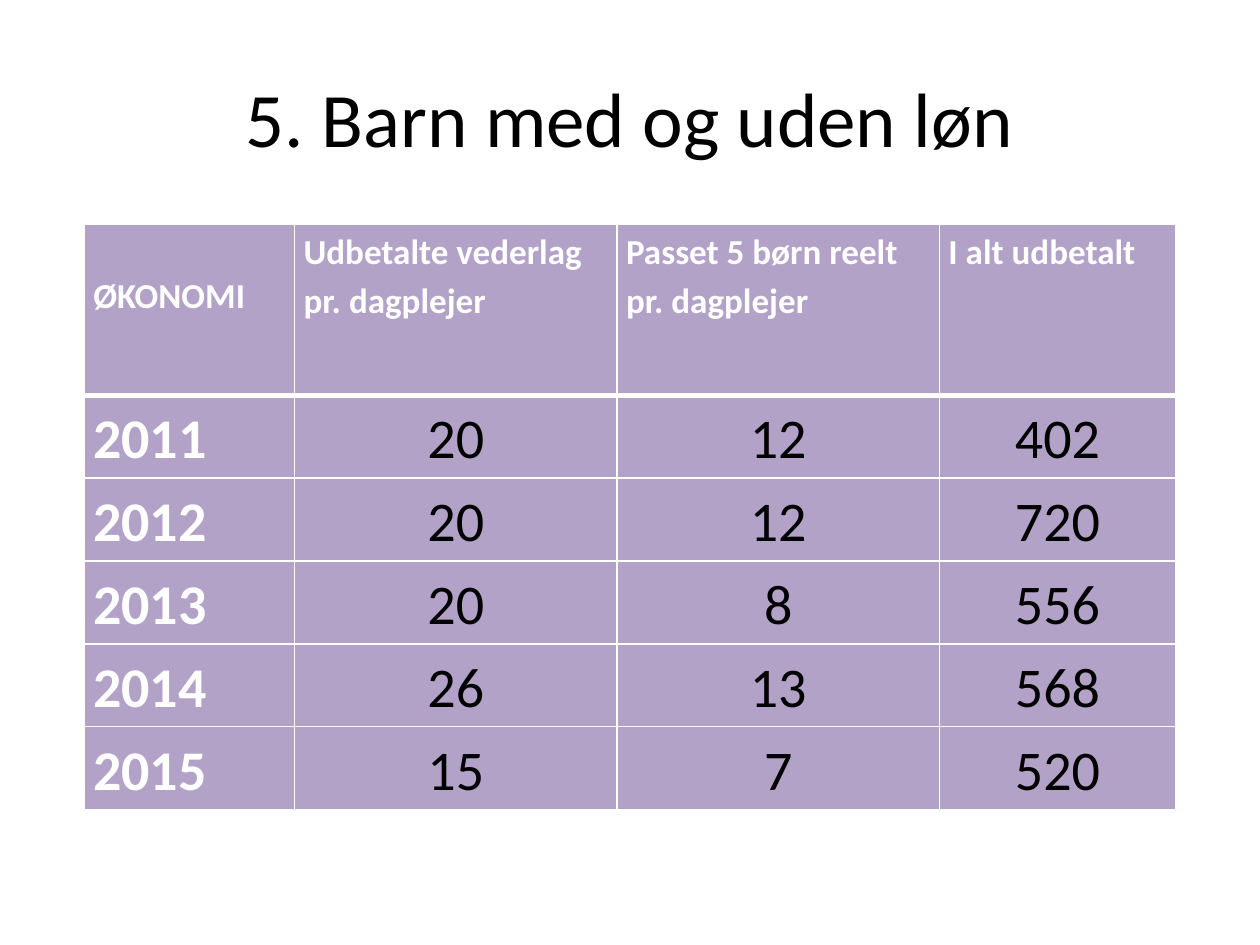
"""Build a slide with a table of child-minding payments per year."""
import dataclasses

import lxml.etree
import pptx
import pptx.dml.color
import pptx.enum.text
import pptx.oxml.ns
import pptx.util

TITLE = "5. Barn med og uden løn"
HEADERS = [
    ["ØKONOMI"],
    ["Udbetalte vederlag", "pr. dagplejer"],
    ["Passet 5 børn reelt", "pr. dagplejer"],
    ["I alt udbetalt"],
]
YEARS = [
    (2011, 20, 12, 402),
    (2012, 20, 12, 720),
    (2013, 20, 8, 556),
    (2014, 26, 13, 568),
    (2015, 15, 7, 520),
]
COLUMN_WIDTHS = [4.24, 6.5, 6.5, 4.76]
HEADER_HEIGHT = 3.45
YEAR_HEIGHT = 1.67
FIRST_HEADER_INSET = 0.89


@dataclasses.dataclass(frozen=True)
class Theme:
    font: str = "Calibri"
    fill: str = "B3A2C7"
    light: str = "FFFFFF"
    dark: str = "000000"
    title_size: int = 44
    header_size: int = 20
    value_size: int = 32
    thin_line: int = 1
    thick_line: int = 3


THEME = Theme()
CM = pptx.util.Cm
ALIGN = pptx.enum.text.PP_ALIGN


def format_paragraph(paragraph, size, color, bold, alignment):
    paragraph.alignment = alignment
    paragraph.font.name = THEME.font
    paragraph.font.size = pptx.util.Pt(size)
    paragraph.font.bold = bold
    paragraph.font.color.rgb = pptx.dml.color.RGBColor.from_string(color)


def add_borders(cell, widths):
    properties = cell._tc.get_or_add_tcPr()
    for index, (side, width) in enumerate(widths.items()):
        line = lxml.etree.Element(pptx.oxml.ns.qn(f"a:ln{side}"), w=str(pptx.util.Pt(width)))
        fill = lxml.etree.SubElement(line, pptx.oxml.ns.qn("a:solidFill"))
        lxml.etree.SubElement(fill, pptx.oxml.ns.qn("a:srgbClr"), val=THEME.light)
        properties.insert(index, line)


def fill_cell(cell, lines, row, column):
    is_header = row == 0
    is_label = is_header or column == 0
    cell.fill.solid()
    cell.fill.fore_color.rgb = pptx.dml.color.RGBColor.from_string(THEME.fill)
    cell.margin_left = cell.margin_right = CM(0.18)
    cell.margin_top = CM(FIRST_HEADER_INSET if is_header and column == 0 else 0)
    cell.margin_bottom = CM(0)
    cell.text = "\n".join(lines)
    for paragraph in cell.text_frame.paragraphs:
        paragraph.line_spacing = 1.15
        format_paragraph(
            paragraph,
            THEME.header_size if is_header else THEME.value_size,
            THEME.light if is_label else THEME.dark,
            is_label,
            ALIGN.LEFT if is_label else ALIGN.CENTER,
        )
    add_borders(cell, {
        "L": THEME.thin_line,
        "R": THEME.thin_line,
        "T": THEME.thick_line if row == 1 else THEME.thin_line,
        "B": THEME.thick_line if is_header else THEME.thin_line,
    })


def add_title(slide):
    title = slide.shapes.title
    title.left, title.top, title.width, title.height = CM(1.27), CM(0.76), CM(22.86), CM(3.18)
    title.text_frame.text = TITLE
    title.text_frame.vertical_anchor = pptx.enum.text.MSO_ANCHOR.MIDDLE
    format_paragraph(title.text_frame.paragraphs[0], THEME.title_size, THEME.dark, False, ALIGN.CENTER)


def add_payment_table(slide):
    rows = HEADERS, *([[str(value)] for value in year] for year in YEARS)
    heights = [HEADER_HEIGHT] + [YEAR_HEIGHT] * len(YEARS)
    table = slide.shapes.add_table(
        len(rows), len(HEADERS), CM(1.7), CM(4.52), CM(sum(COLUMN_WIDTHS)), CM(sum(heights))
    ).table
    for column, width in zip(table.columns, COLUMN_WIDTHS):
        column.width = CM(width)
    for row, height in zip(table.rows, heights):
        row.height = CM(height)
    for row, contents in enumerate(rows):
        for column, lines in enumerate(contents):
            fill_cell(table.cell(row, column), lines, row, column)


def main():
    presentation = pptx.Presentation()
    presentation.slide_width, presentation.slide_height = CM(25.4), CM(19.05)
    slide = presentation.slides.add_slide(presentation.slide_layouts.get_by_name("Title Only"))
    add_title(slide)
    add_payment_table(slide)
    presentation.save("out.pptx")


if __name__ == "__main__":
    main()
